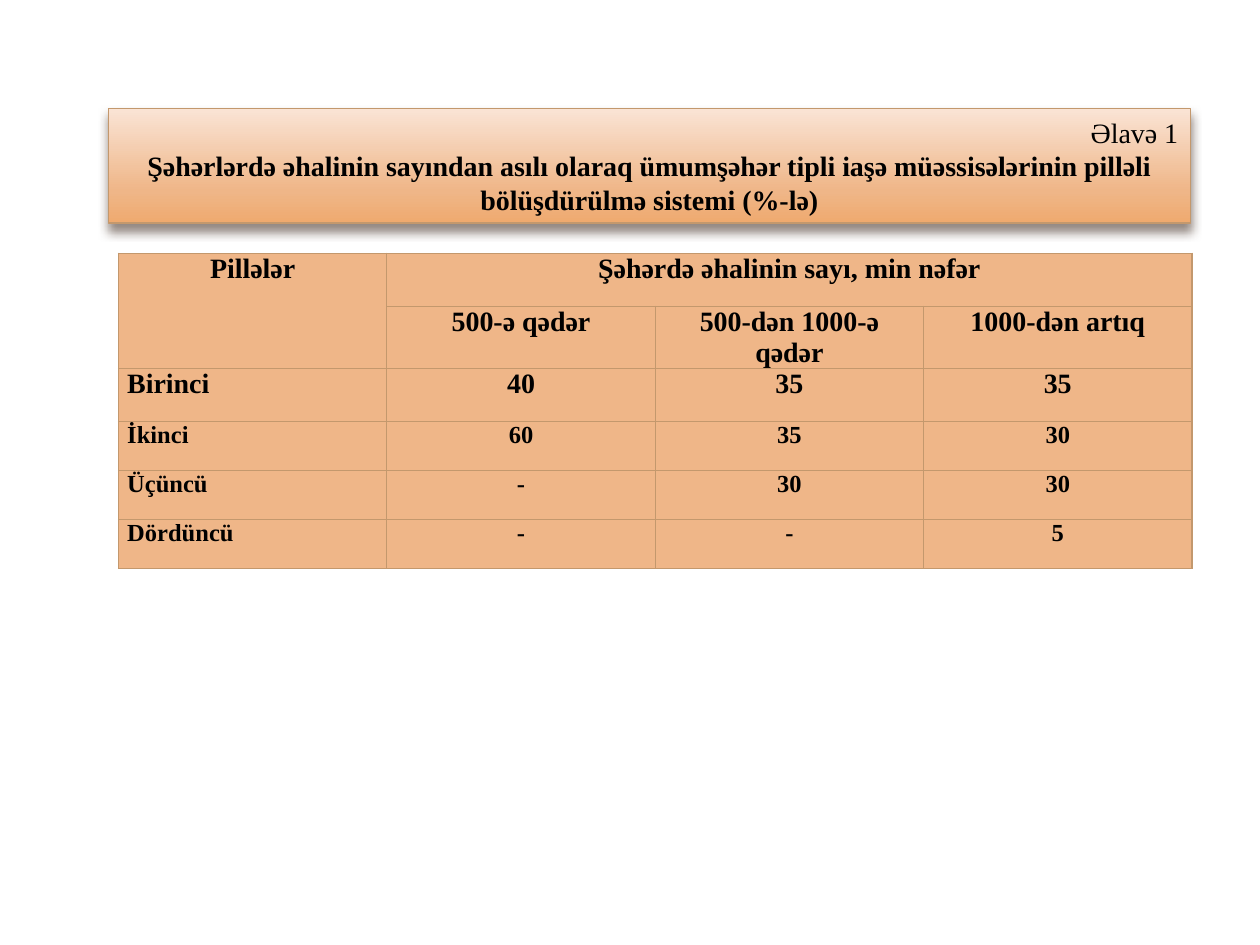
from copy import deepcopy

from lxml.etree import SubElement
from pptx import Presentation
from pptx.dml.color import RGBColor
from pptx.enum.shapes import MSO_SHAPE as Shape
from pptx.enum.text import MSO_ANCHOR as Anchor, PP_ALIGN as Align
from pptx.oxml import parse_xml
from pptx.oxml.ns import nsdecls, qn
from pptx.util import Inches, Pt

BLACK = RGBColor(0x00, 0x00, 0x00)
PALE = RGBColor(0xFA, 0xE4, 0xD5)
PEACH = RGBColor(0xEF, 0xB6, 0x88)
ORANGE = RGBColor(0xEF, 0xAA, 0x6F)
TAN = RGBColor(0xC3, 0x98, 0x6D)
BROWN = RGBColor(0x4E, 0x3B, 0x30)
FONT = "Times New Roman"
LINE_WIDTH = Pt(0.79)
COLUMN_WIDTH = 2.13
ROW_HEIGHTS = [0.42, 0.42, 0.42, 0.39, 0.39, 0.39]
ROWS = [
    ["Pillələr", "Şəhərdə əhalinin sayı, min nəfər", "", ""],
    ["", "500-ə qədər", "500-dən 1000-ə qədər", "1000-dən artıq"],
    ["Birinci", "40", "35", "35"],
    ["İkinci", "60", "35", "30"],
    ["Üçüncü", "-", "30", "30"],
    ["Dördüncü", "-", "-", "5"],
]


def write(para, text, size=16, bold=True, align=Align.CENTER):
    """Put formatted text into a paragraph."""
    para.alignment = align
    span = para.add_run()
    span.text = text
    span.font.name = FONT
    span.font.size = Pt(size)
    span.font.bold = bold
    span.font.color.rgb = BLACK


def shade(box, stops, angle):
    """Fill a box with a linear gradient of (position, colour) stops."""
    box.fill.gradient()
    box.fill.gradient_angle = angle
    stop_list = box._element.spPr.find(qn("a:gradFill")).find(qn("a:gsLst"))
    while len(stop_list) < len(stops):
        stop_list.append(deepcopy(stop_list[-1]))
    for stop, (position, colour) in zip(box.fill.gradient_stops, stops):
        stop.position = position
        stop.color.rgb = colour


def cast_shadow(box, colour, blur, distance, opacity):
    """Give a box a shadow that falls straight down."""
    box.shadow.inherit = False
    effects = box._element.spPr.find(qn("a:effectLst"))
    shadow = SubElement(effects, qn("a:outerShdw"), blurRad=str(Pt(blur)),
                        dist=str(Pt(distance)), dir="5400000", rotWithShape="0")
    tint = SubElement(shadow, qn("a:srgbClr"), val=str(colour))
    SubElement(tint, qn("a:alpha"), val=str(opacity * 1000))


def add_title(page):
    """Add the shaded title box with its appendix number."""
    box = page.shapes.add_shape(Shape.RECTANGLE, Inches(0.86), Inches(0.86),
                                Inches(8.59), Inches(0.91))
    shade(box, [(0, PALE), (0.72, PEACH), (1, ORANGE)], angle=270)
    box.line.color.rgb = TAN
    box.line.width = LINE_WIDTH
    cast_shadow(box, BROWN, blur=6, distance=4, opacity=60)
    frame = box.text_frame
    frame.word_wrap = True
    frame.vertical_anchor = Anchor.MIDDLE
    write(frame.paragraphs[0], "Əlavə 1", bold=False, align=Align.RIGHT)
    write(frame.add_paragraph(),
          "Şəhərlərdə əhalinin sayından asılı olaraq ümumşəhər tipli iaşə "
          "müəssisələrinin pilləli bölüşdürülmə sistemi (%-lə)")


def style_cell(cell):
    """Set the fill, margins and four borders of a table cell."""
    cell.fill.solid()
    cell.fill.fore_color.rgb = PEACH
    cell.margin_left = cell.margin_right = Inches(0.07)
    cell.margin_top = cell.margin_bottom = 0
    properties = cell._tc.get_or_add_tcPr()
    for index, side in enumerate("LRTB"):
        properties.insert(index, parse_xml(
            f'<a:ln{side} {nsdecls("a")} w="{LINE_WIDTH}"><a:solidFill>'
            f'<a:srgbClr val="{TAN}"/></a:solidFill></a:ln{side}>'))


def add_distribution_table(page):
    """Add the table of levels against city population."""
    columns = len(ROWS[0])
    table = page.shapes.add_table(
        len(ROWS), columns, Inches(0.94), Inches(2.01),
        Inches(columns * COLUMN_WIDTH), Inches(sum(ROW_HEIGHTS))).table
    for column in table.columns:
        column.width = Inches(COLUMN_WIDTH)
    table.cell(0, 0).merge(table.cell(1, 0))
    table.cell(0, 1).merge(table.cell(0, columns - 1))
    for r, (texts, height) in enumerate(zip(ROWS, ROW_HEIGHTS)):
        table.rows[r].height = Inches(height)
        for c, text in enumerate(texts):
            cell = table.cell(r, c)
            style_cell(cell)
            if text:
                write(cell.text_frame.paragraphs[0], text,
                      size=16 if r < 3 else 14,
                      align=Align.JUSTIFY if r > 1 and c == 0 else Align.CENTER)


def main():
    """Build and save the slide."""
    deck = Presentation()
    deck.slide_width, deck.slide_height = Inches(10), Inches(7.5)
    page = deck.slides.add_slide(deck.slide_layouts[6])
    add_title(page)
    add_distribution_table(page)
    deck.save("out.pptx")


if __name__ == "__main__":
    main()
